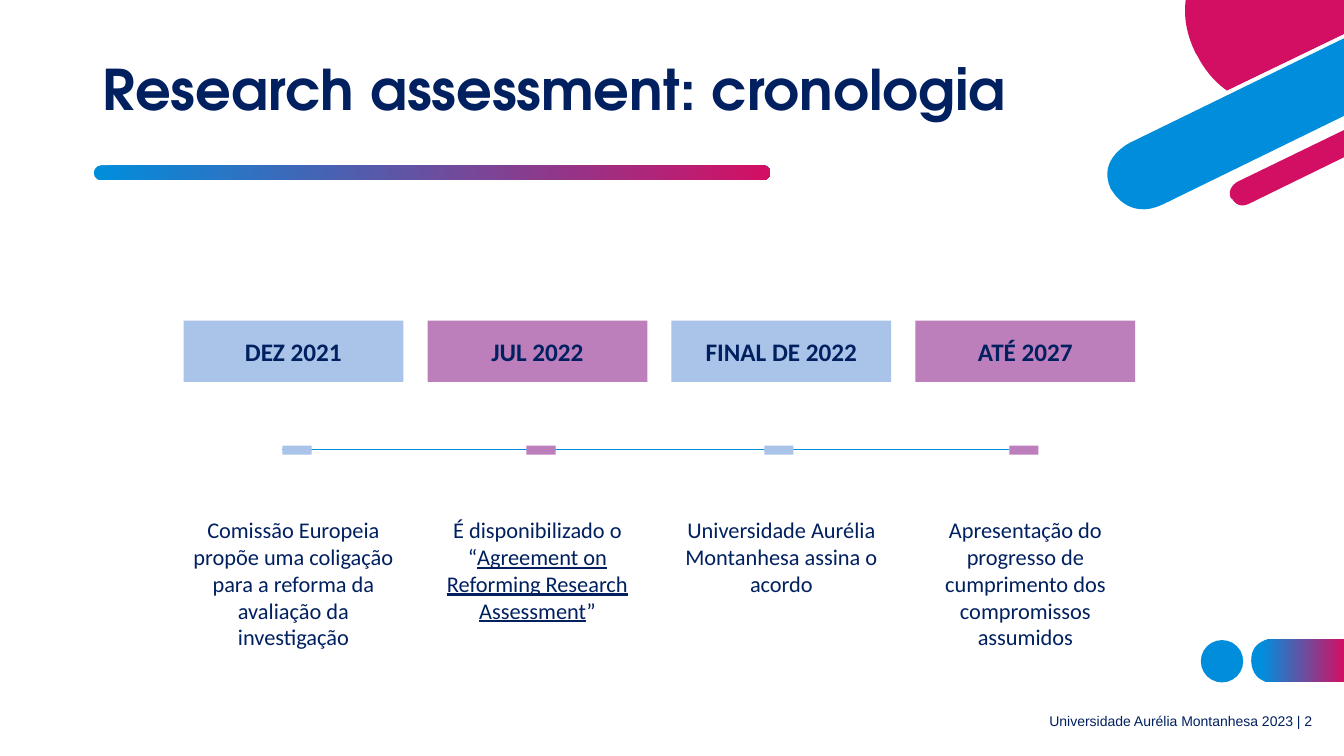
from lxml import etree
from pptx import Presentation
from pptx.dml.color import RGBColor
from pptx.enum.shapes import MSO_CONNECTOR, MSO_SHAPE
from pptx.enum.text import MSO_ANCHOR, PP_ALIGN
from pptx.oxml.ns import qn
from pptx.util import Inches, Pt

RECTANGLE = MSO_SHAPE.RECTANGLE
ROUNDED = MSO_SHAPE.ROUNDED_RECTANGLE
OVAL = MSO_SHAPE.OVAL
STRAIGHT = MSO_CONNECTOR.STRAIGHT
TOP, MIDDLE = MSO_ANCHOR.TOP, MSO_ANCHOR.MIDDLE
LEFT, CENTER = PP_ALIGN.LEFT, PP_ALIGN.CENTER

NAVY, BLUE, PINK, WHITE = "002060", "008EDC", "D30F64", "FFFFFF"
LIGHT_BLUE, MAUVE = "AAC3E8", "BC7FBB"
SLIDE_WIDTH, SLIDE_HEIGHT = 13.33, 7.5
COLUMN_LEFT, COLUMN_STEP, COLUMN_WIDTH = 1.82, 2.42, 2.18
CURVE_STEPS = 16
UNIVERSITY = "Universidade Aurélia Montanhesa"

MILESTONES = [
    ("DEZ 2021", 2.8, [("Comissão Europeia propõe uma coligação para a reforma "
                        "da avaliação da investigação", False)]),
    ("JUL 2022", 5.22, [("É disponibilizado o “", False),
                        ("Agreement on Reforming Research Assessment", True),
                        ("”", False)]),
    ("FINAL DE 2022", 7.58, [(f"{UNIVERSITY} assina o acordo", False)]),
    ("ATÉ 2027", 10.01, [("Apresentação do progresso de cumprimento dos "
                          "compromissos assumidos", False)]),
]

PINK_DISC = [(11.88, 0.56), (11.88, 0.56, 11.97, 0.76, 12.17, 0.9),
             (13.33, 0.34), (13.33, 0), (11.76, 0),
             (11.74, 0.15, 11.76, 0.33, 11.86, 0.53)]
WHITE_EDGE = [(13.33, 0.34), (11.2, 1.37), (11.2, 1.37, 10.78, 1.54, 10.99, 1.91),
              (10.99, 1.91, 11.17, 2.24, 11.54, 2.06), (13.33, 1.19)]
BLUE_BAND = [(13.33, 0.38), (11.22, 1.41), (11.22, 1.41, 10.87, 1.57, 11.02, 1.88),
             (11.03, 1.89), (11.03, 1.89, 11.19, 2.19, 11.53, 2.03), (13.33, 1.15)]
PINK_BAND = [(13.33, 1.29), (12.28, 1.8), (12.28, 1.8, 12.16, 1.86, 12.21, 1.97),
             (12.22, 1.97), (12.22, 1.97, 12.27, 2.08, 12.39, 2.02), (13.33, 1.56)]
GRADIENT_TAB = [(13.33, 6.34), (12.62, 6.34), (12.62, 6.34, 12.41, 6.34, 12.41, 6.55),
                (12.41, 6.56), (12.41, 6.56, 12.41, 6.77, 12.62, 6.77), (13.33, 6.77)]


def color(value):
    """Return the colour of a hex string."""
    return RGBColor.from_string(value)


def paint(shape, fill):
    """Fill a shape plainly and remove its line and shadow."""
    shape.shadow.inherit = False
    shape.line.fill.background()
    shape.fill.solid()
    shape.fill.fore_color.rgb = color(fill)


def paint_gradient(shape, start):
    """Fill a shape with a blue to pink gradient from left to right."""
    shape.fill.gradient()
    shape.fill.gradient_angle = 0
    stops = zip(shape.fill.gradient_stops, (start, 1), (BLUE, PINK))
    for stop, position, value in stops:
        stop.position = position
        stop.color.rgb = color(value)


def add_box(slide, kind, left, top, width, height, fill):
    """Add a preset shape with a plain fill."""
    shape = slide.shapes.add_shape(
        kind, Inches(left), Inches(top), Inches(width), Inches(height))
    paint(shape, fill)
    return shape


def curve_points(start, curve):
    """Return points along a cubic Bézier curve."""
    controls = [start, curve[:2], curve[2:4], curve[4:]]
    points = []
    for step in range(1, CURVE_STEPS + 1):
        t = step / CURVE_STEPS
        weights = ((1 - t) ** 3, 3 * t * (1 - t) ** 2, 3 * t * t * (1 - t), t ** 3)
        points.append(tuple(sum(weight * control[axis] for weight, control
                                in zip(weights, controls)) for axis in (0, 1)))
    return points


def add_outline(slide, outline, fill):
    """Add a closed freeform of corners (two numbers) and curves (six numbers)."""
    points = [outline[0]]
    for part in outline[1:]:
        points += [part] if len(part) == 2 else curve_points(points[-1], part)
    vertices = [(Inches(x), Inches(y)) for x, y in points]
    builder = slide.shapes.build_freeform(*vertices[0])
    builder.add_line_segments(vertices[1:], close=True)
    shape = builder.convert_to_shape()
    paint(shape, fill)
    return shape


def write(shape, runs, size, font, bold=False, align=CENTER, anchor=MIDDLE):
    """Write one paragraph of (text, underlined) runs into a shape."""
    frame = shape.text_frame
    frame.word_wrap = True
    frame.vertical_anchor = anchor
    paragraph = frame.paragraphs[0]
    paragraph.alignment = align
    for text, underlined in runs:
        run = paragraph.add_run()
        run.text = text
        run.font.size = Pt(size)
        run.font.name = font
        run.font.bold = bold
        run.font.underline = underlined
        run.font.color.rgb = color(NAVY)
    return paragraph


def add_text(slide, left, top, width, height):
    """Add an empty text box."""
    return slide.shapes.add_textbox(
        Inches(left), Inches(top), Inches(width), Inches(height))


def trim_sides(shape):
    """Remove the left and right text insets."""
    shape.text_frame.margin_left = shape.text_frame.margin_right = 0


def add_decoration(slide):
    """Add the corner bands, the title bar and the footer shapes."""
    add_box(slide, OVAL, 11.91, 6.35, 0.42, 0.42, BLUE)
    paint_gradient(add_outline(slide, GRADIENT_TAB, BLUE), 0.12)
    for outline, fill in ((PINK_DISC, PINK), (WHITE_EDGE, WHITE),
                          (BLUE_BAND, BLUE), (PINK_BAND, PINK)):
        add_outline(slide, outline, fill)
    bar = add_box(slide, ROUNDED, 0.93, 1.64, 6.71, 0.15, BLUE)
    bar.adjustments[0] = 0.5
    paint_gradient(bar, 0)


def add_timeline(slide):
    """Add the line that joins the milestones."""
    line = slide.shapes.add_connector(
        STRAIGHT, Inches(2.8), Inches(4.46), Inches(10.01), Inches(4.46))
    line.line.color.rgb = color(BLUE)
    line.line.width = Pt(0.5)
    etree.SubElement(line.element.spPr, qn("a:effectLst"))


def add_milestone(slide, index, date, marker_left, description):
    """Add the date box, marker and description of one milestone."""
    left = COLUMN_LEFT + index * COLUMN_STEP
    fill = (LIGHT_BLUE, MAUVE)[index % 2]
    box = add_box(slide, RECTANGLE, left, 3.18, COLUMN_WIDTH, 0.61, fill)
    trim_sides(box)
    write(box, [(date, False)], 18, "Calibri", bold=True)
    add_box(slide, RECTANGLE, marker_left, 4.42, 0.29, 0.09, fill)
    text = add_text(slide, left, 5.07, COLUMN_WIDTH, 1.29)
    trim_sides(text)
    write(text, description, 16, "Calibri", anchor=TOP)


def main():
    """Build the slide and save it."""
    presentation = Presentation()
    presentation.slide_width = Inches(SLIDE_WIDTH)
    presentation.slide_height = Inches(SLIDE_HEIGHT)
    slide = presentation.slides.add_slide(presentation.slide_layouts[6])
    add_decoration(slide)
    title = write(add_text(slide, 0.92, 0.4, 9.9, 1.03),
                  [("Research assessment: cronologia", False)],
                  40, "TeX Gyre Adventor", bold=True, align=LEFT)
    title.line_spacing = 0.9
    add_timeline(slide)
    for index, milestone in enumerate(MILESTONES):
        add_milestone(slide, index, *milestone)
    write(add_text(slide, 10.09, 6.95, 3.24, 0.4),
          [(f"{UNIVERSITY} 2023 | 2", False)], 10, "Arial")
    presentation.save("out.pptx")


if __name__ == "__main__":
    main()
